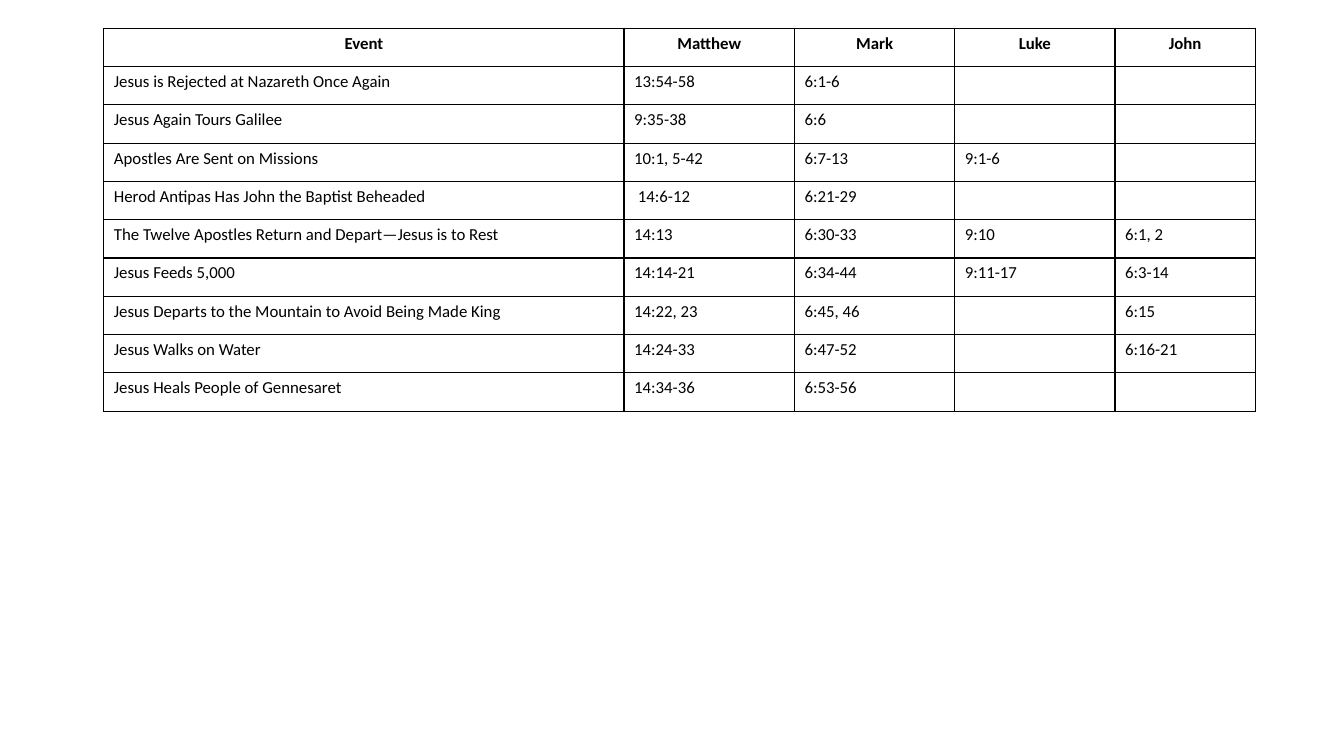
from lxml import etree
from pptx import Presentation
from pptx import util as u
from pptx.dml import color
from pptx.enum import text
from pptx.oxml import ns

HUES = {"ink": "000000"}
WIDTHS = [5.16, 1.69, 1.59, 1.59, 1.39]
HIGH = 0.38
ROWS = [
    ("Event", "Matthew", "Mark", "Luke", "John"),
    ("Jesus is Rejected at Nazareth Once Again", "13:54-58", "6:1-6", "", ""),
    ("Jesus Again Tours Galilee", "9:35-38", "6:6", "", ""),
    ("Apostles Are Sent on Missions", "10:1, 5-42", "6:7-13", "9:1-6", ""),
    ("Herod Antipas Has John the Baptist Beheaded", " 14:6-12", "6:21-29", "", ""),
    ("The Twelve Apostles Return and Depart—Jesus is to Rest", "14:13", "6:30-33", "9:10", "6:1, 2"),
    ("Jesus Feeds 5,000", "14:14-21", "6:34-44", "9:11-17", "6:3-14"),
    ("Jesus Departs to the Mountain to Avoid Being Made King", "14:22, 23", "6:45, 46", "", "6:15"),
    ("Jesus Walks on Water", "14:24-33", "6:47-52", "", "6:16-21"),
    ("Jesus Heals People of Gennesaret", "14:34-36", "6:53-56", "", ""),
]
FONT = {"name": "Calibri", "size": u.Pt(12)}


def border(cell):
    props = cell._tc.get_or_add_tcPr()
    for spot, side in enumerate(("lnL", "lnR", "lnT", "lnB")):
        line = etree.Element(ns.qn("a:" + side), w=str(u.Pt(1)))
        fill = etree.SubElement(line, ns.qn("a:solidFill"))
        etree.SubElement(fill, ns.qn("a:srgbClr"), val=HUES["ink"])
        props.insert(spot, line)


# Slide
deck = Presentation()
deck.slide_width, deck.slide_height = u.Inches(13.33), u.Inches(7.5)
slide = deck.slides.add_slide(deck.slide_layouts[6])

# Table grid
table = slide.shapes.add_table(
    len(ROWS), len(WIDTHS), u.Inches(1.03), u.Inches(0.28),
    u.Inches(sum(WIDTHS)), u.Inches(HIGH * len(ROWS))).table
table.first_row = table.horz_banding = False
for col, wide in zip(table.columns, WIDTHS):
    col.width = u.Inches(wide)
for row in table.rows:
    row.height = u.Inches(HIGH)

# Cells: bold, centred header above plain rows
for r, words in enumerate(ROWS):
    for c, word in enumerate(words):
        cell = table.cell(r, c)
        cell.fill.background()
        border(cell)
        para = cell.text_frame.paragraphs[0]
        if not word:
            # Keep empty cells at the text size so rows stay even
            etree.SubElement(para._p, ns.qn("a:endParaRPr"), sz="1200")
            continue
        if r == 0:
            para.alignment = text.PP_ALIGN.CENTER
        run = para.add_run()
        run.text = word
        for key, value in FONT.items():
            setattr(run.font, key, value)
        run.font.bold = r == 0
        run.font.color.rgb = color.RGBColor.from_string(HUES["ink"])

deck.save("out.pptx")
